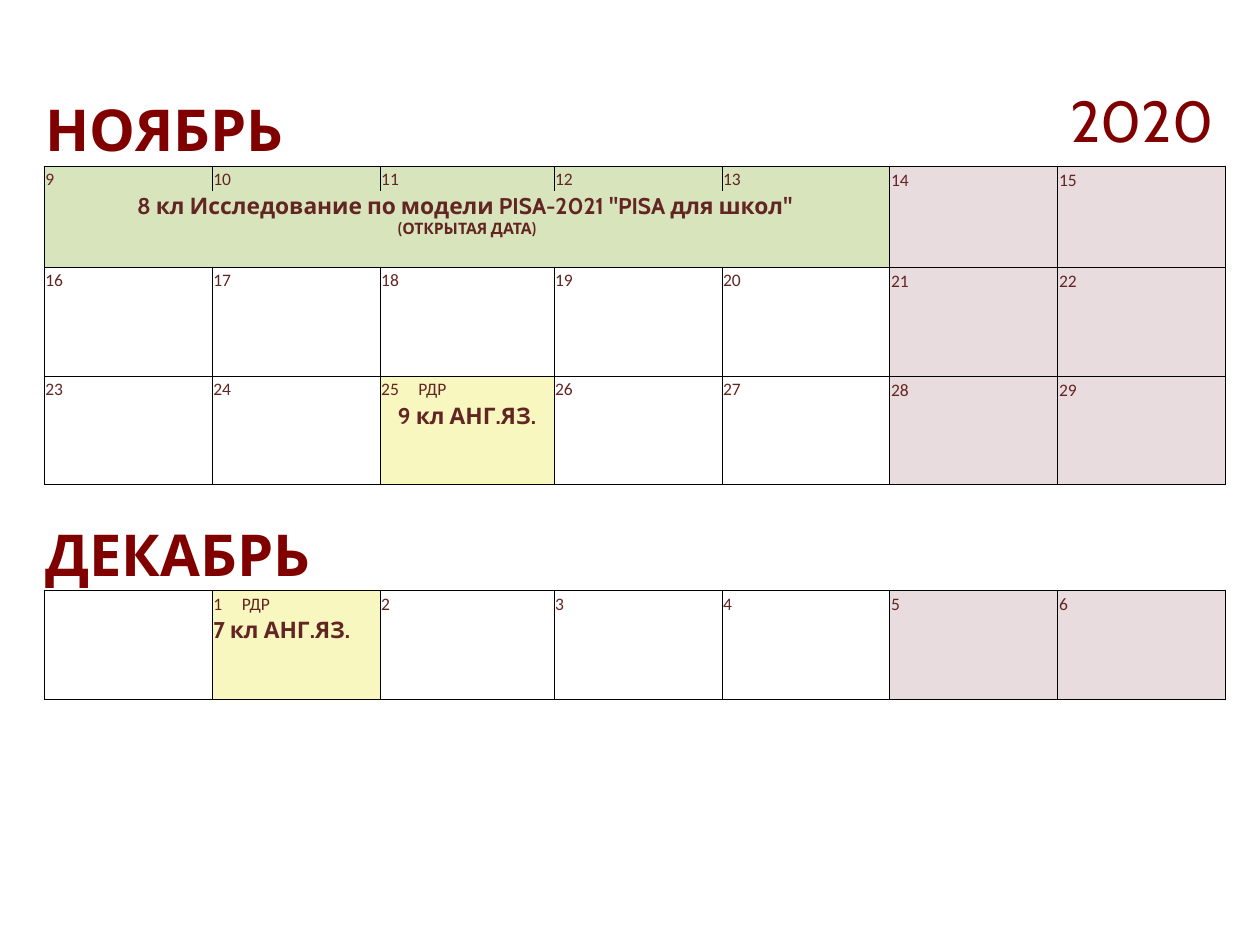
from lxml import etree
from pptx import Presentation
from pptx.dml.color import RGBColor
from pptx.enum.text import MSO_ANCHOR, PP_ALIGN
from pptx.oxml.ns import qn
from pptx.util import Pt

GREEN, YELLOW, PINK, WHITE = "D8E4BC", "F7F7BF", "E8DCDE", "FFFFFF"
MAROON, BROWN = "800000", "632523"
NO_STYLE = "{2D5ABB26-0587-4C30-8999-92F81FD0307C}"


def rgb(value):
    return RGBColor.from_string(value)


def write(p, text, size, font="Cabin", color=BROWN, bold=True, align=PP_ALIGN.LEFT, tab=None):
    p.text = text
    p.alignment = align
    if tab:
        tabs = etree.SubElement(p._p.get_or_add_pPr(), qn("a:tabLst"))
        etree.SubElement(tabs, qn("a:tab"), pos=str(Pt(tab)), algn="l")
    p.font.size, p.font.name, p.font.bold = Pt(size), font, bold
    p.font.color.rgb = rgb(color)


prs = Presentation()
prs.slide_width, prs.slide_height = Pt(720), Pt(540)
s = prs.slides.add_slide(prs.slide_layouts[6])

# Calendar grid: Wednesday takes two half columns
widths = [96, 96, 49.7, 49.7, 96, 96, 96, 96]
heights = [46.1, 14.3, 43.5, 14.3, 48, 14.3, 47.5, 14.7, 46.1, 14.3, 47.9]
tbl = s.shapes.add_table(len(heights), len(widths), Pt(25.2), Pt(48.8),
                         Pt(sum(widths)), Pt(sum(heights))).table
tbl.first_row = tbl.horz_banding = False
tbl._tbl.tblPr.find(qn("a:tableStyleId")).text = NO_STYLE
for col, width in zip(tbl.columns, widths):
    col.width = Pt(width)
for row, height in zip(tbl.rows, heights):
    row.height = Pt(height)

# Kinds of rows and the sides on which their cells are ruled
header_rows, day_rows, note_rows, gap_row = (0, 8), (1, 3, 5, 9), (2, 4, 6, 10), 7
ruled = {gap_row: "T"}
ruled |= {r: "B" for r in header_rows}
ruled |= {r: "LRT" for r in day_rows}
ruled |= {r: "LRB" for r in note_rows}

# Merges
for r in (*header_rows, 2):
    tbl.cell(r, 0).merge(tbl.cell(r, 5))
for r in (*day_rows, 4, 6, 10):
    tbl.cell(r, 2).merge(tbl.cell(r, 3))

# Fills: white workdays, pink weekends, coloured test days
fills = {(r, c): PINK if c > 5 else WHITE
         for r in day_rows + note_rows for c in range(8)}
fills |= {(r, c): GREEN for r in (1, 2) for c in range(6)}
fills |= {(r, c): YELLOW for r, c in ((5, 2), (6, 2), (9, 1), (10, 1))}

# Margins, borders and fill of every cell
for r in range(len(heights)):
    for c in range(len(widths)):
        cell = tbl.cell(r, c)
        cell.margin_left = cell.margin_right = cell.margin_top = Pt(0.7)
        cell.margin_bottom = 0
        cell.text_frame.paragraphs[0]._p.get_or_add_endParaRPr().set("sz", "1000")
        tcPr = cell._tc.get_or_add_tcPr()
        for side in "TB" if cell.is_spanned else "LRTB":
            ln = etree.SubElement(tcPr, qn("a:ln" + side), w=str(Pt(0.5)))
            if side in ruled[r]:
                fill = etree.SubElement(ln, qn("a:solidFill"))
                etree.SubElement(fill, qn("a:srgbClr"), val="000000")
            else:
                etree.SubElement(ln, qn("a:noFill"))
        if (r, c) in fills:
            cell.fill.solid()
            cell.fill.fore_color.rgb = rgb(fills[r, c])
        else:
            cell.fill.background()

# Month names and year
for r, month in zip(header_rows, ("НОЯБРЬ", "ДЕКАБРЬ")):
    cell = tbl.cell(r, 0)
    cell.vertical_anchor = MSO_ANCHOR.BOTTOM
    write(cell.text_frame.paragraphs[0], month, 33, color=MAROON)
write(tbl.cell(0, 7).text_frame.paragraphs[0], "2020", 33,
      color=MAROON, bold=False, align=PP_ALIGN.CENTER)

# Day numbers, with the tab position of the label on test days
day_cols = [0, 1, 2, 4, 5, 6, 7]
test_tabs = {25: 21.2, 1: 16.3}
for r, first in zip(day_rows, (9, 16, 23, 0)):
    for day, c in enumerate(day_cols, first):
        if day == 0:
            continue
        cell = tbl.cell(r, c)
        cell.vertical_anchor = MSO_ANCHOR.BOTTOM if c > 5 or r == 9 else MSO_ANCHOR.MIDDLE
        tab = test_tabs.get(day)
        write(cell.text_frame.paragraphs[0], f"{day}\tРДР" if tab else str(day), 10,
              "Calibri", bold=False, tab=tab)

# Tests
tf = tbl.cell(2, 0).text_frame
write(tf.paragraphs[0], '8 кл Исследование по модели PISA-2021 "PISA для школ" ', 13,
      align=PP_ALIGN.CENTER)
write(tf.add_paragraph(), "(ОТКРЫТАЯ ДАТА)", 9, align=PP_ALIGN.CENTER)
write(tbl.cell(6, 2).text_frame.paragraphs[0], "9 кл АНГ.ЯЗ.", 13, align=PP_ALIGN.CENTER)
write(tbl.cell(10, 1).text_frame.paragraphs[0], "7 кл АНГ.ЯЗ.", 13)

prs.save("out.pptx")
